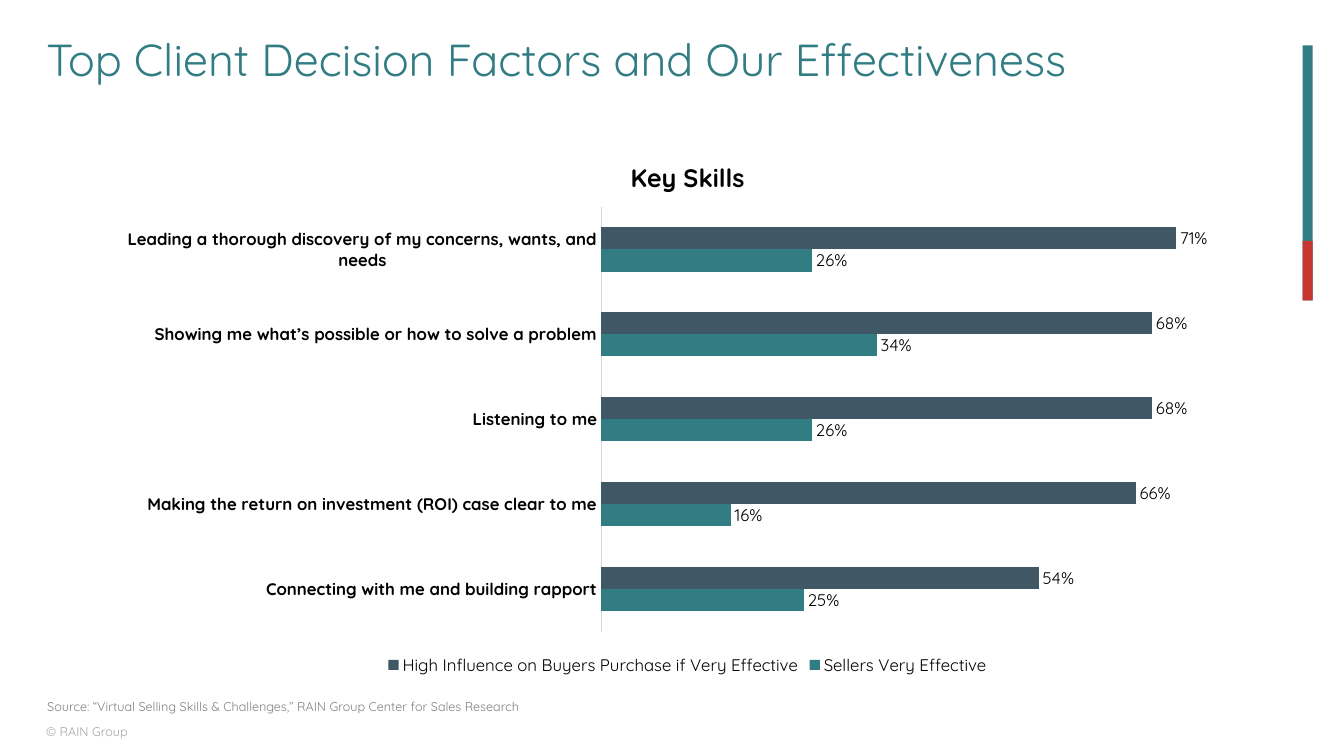
from pptx import Presentation
from pptx.chart.data import CategoryChartData
from pptx.dml.color import RGBColor
from pptx.enum.chart import XL_CHART_TYPE, XL_LABEL_POSITION, XL_LEGEND_POSITION, XL_TICK_MARK
from pptx.enum.shapes import MSO_SHAPE
from pptx.enum.text import MSO_ANCHOR, MSO_AUTO_SIZE, PP_ALIGN
from pptx.oxml import parse_xml
from pptx.oxml.ns import nsdecls
from pptx.util import Inches, Pt

RECTANGLE = MSO_SHAPE.RECTANGLE
LEFT = PP_ALIGN.LEFT
MIDDLE = MSO_ANCHOR.MIDDLE
NO_TICKS = XL_TICK_MARK.NONE

FONT = "Quicksand"
TEAL = RGBColor(0x31, 0x7D, 0x83)
RED = RGBColor(0xC6, 0x37, 0x31)
SLATE = RGBColor(0x40, 0x57, 0x66)
BLACK = RGBColor(0x00, 0x00, 0x00)
GRAY = RGBColor(0x80, 0x80, 0x80)
PALE_GRAY = RGBColor(0xA5, 0xA5, 0xA5)
AXIS_GRAY = RGBColor(0xD9, 0xD9, 0xD9)


def style_font(font, size, color, bold=False):
    formats = {"name": FONT, "size": Pt(size), "bold": bold}
    for attribute, value in formats.items():
        setattr(font, attribute, value)
    font.color.rgb = color


presentation = Presentation()
presentation.slide_width = Inches(13.33)
presentation.slide_height = Inches(7.5)
slide = presentation.slides.add_slide(presentation.slide_layouts[5])

# Accent bar at the right edge
for top, height, color in [(0.45, 2.53, TEAL), (2.39, 0.59, RED)]:
    accent = slide.shapes.add_shape(
        RECTANGLE, Inches(12.92), Inches(top), Inches(0.1), Inches(height))
    accent.shadow.inherit = False
    accent.fill.solid()
    accent.fill.fore_color.rgb = color
    accent.line.fill.background()

# Title
title = slide.shapes.title
title.left, title.top = Inches(0.36), Inches(0.16)
title.width, title.height = Inches(12.18), Inches(0.91)
title.text_frame.text = "Top Client Decision Factors and Our Effectiveness"
title.text_frame.vertical_anchor = MIDDLE
title.text_frame.auto_size = MSO_AUTO_SIZE.NONE
heading = title.text_frame.paragraphs[0]
heading.alignment = LEFT
heading.line_spacing = 0.9
style_font(heading.runs[0].font, 32, TEAL)

# Chart data, listed from the bottom category up
skills = CategoryChartData(number_format="0%")
skills.categories = [
    "Connecting with me and building rapport",
    "Making the return on investment (ROI) case clear to me",
    "Listening to me",
    "Showing me what’s possible or how to solve a problem",
    "Leading a thorough discovery of my concerns, wants, and needs",
]
skills.add_series("Sellers Very Effective", [0.25, 0.16, 0.26, 0.34, 0.26])
skills.add_series("High Influence on Buyers Purchase if Very Effective",
                  [0.54, 0.66, 0.68, 0.68, 0.71])
chart = slide.shapes.add_chart(
    XL_CHART_TYPE.BAR_CLUSTERED, Inches(1.03), Inches(1.37),
    Inches(11.58), Inches(5.37), skills).chart
style_font(chart.font, 10, BLACK)

# Chart title and legend
chart.has_title = True
chart.chart_title.text_frame.text = "Key Skills"
style_font(chart.chart_title.text_frame.paragraphs[0].runs[0].font, 18, BLACK, True)
chart.chart_title.include_in_layout = False
chart.has_legend = True
chart.legend.position = XL_LEGEND_POSITION.BOTTOM
chart.legend.include_in_layout = False
style_font(chart.legend.font, 12, BLACK)

# Axes
skill_axis = chart.category_axis
skill_axis.major_tick_mark = NO_TICKS
skill_axis.minor_tick_mark = NO_TICKS
skill_axis.format.line.color.rgb = AXIS_GRAY
skill_axis.format.line.width = Pt(0.75)
style_font(skill_axis.tick_labels.font, 12, BLACK, True)
percent_axis = chart.value_axis
percent_axis.minimum_scale = 0
percent_axis.maximum_scale = 0.8
percent_axis.has_major_gridlines = False
percent_axis.visible = False

# Bars and value labels
plot = chart.plots[0]
plot.gap_width = 182
plot.overlap = 0
plot.vary_by_categories = False
for series, color in zip(plot.series, [TEAL, SLATE]):
    series.format.fill.solid()
    series.format.fill.fore_color.rgb = color
    labels = series.data_labels
    labels.show_value = True
    labels.position = XL_LABEL_POSITION.OUTSIDE_END
    labels.number_format = "0%"
    labels.number_format_is_linked = False
    style_font(labels.font, 12, BLACK)

# Plot area as fractions of the chart frame
plot_area = chart.plots[0]._element.getparent()
for old_layout in plot_area.findall("{*}layout"):
    plot_area.remove(old_layout)
plot_area.insert(0, parse_xml(
    f'<c:layout {nsdecls("c")}><c:manualLayout><c:layoutTarget val="inner"/>'
    '<c:xMode val="edge"/><c:yMode val="edge"/><c:x val="0.426"/><c:y val="0.127"/>'
    '<c:w val="0.555"/><c:h val="0.785"/></c:manualLayout></c:layout>'))

# Source and copyright lines
footers = [
    ("Source: “Virtual Selling Skills & Challenges,” RAIN Group Center for Sales Research",
     0.37, 6.88, 5.11, 0.25, GRAY, 1.0),
    ("© RAIN Group", 0.36, 7.06, 1.08, 0.37, PALE_GRAY, 1.5),
]
for text, left, top, width, height, color, spacing in footers:
    footer = slide.shapes.add_textbox(
        Inches(left), Inches(top), Inches(width), Inches(height)).text_frame
    footer.word_wrap = False
    footer.text = text
    footer.paragraphs[0].line_spacing = spacing
    style_font(footer.paragraphs[0].runs[0].font, 9, color)

presentation.save("out.pptx")
